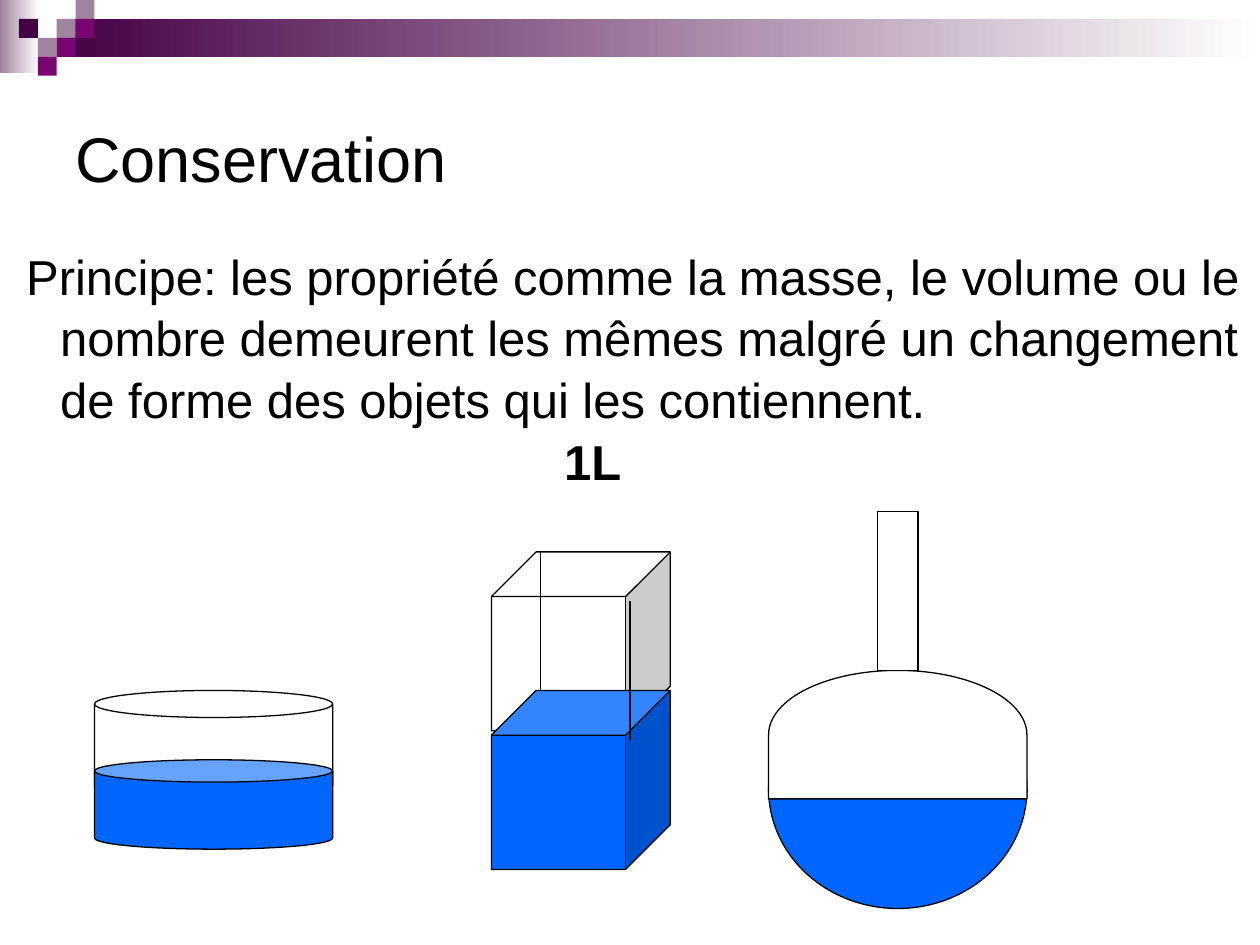
import pptx
import pptx.util
import pptx.dml.color
import pptx.enum.shapes
import pptx.enum.text
import pptx.oxml.ns
import lxml.etree

Inches = pptx.util.Inches
Pt = pptx.util.Pt
SHAPE = pptx.enum.shapes.MSO_SHAPE
COLORS = {
    "black": "000000",
    "white": "FFFFFF",
    "water": "0066FF",
    "dark": "440044",
    "plum": "790571",
    "mauve": "9F839F",
}
FONT = "Arial"


def color(name):
    return pptx.dml.color.RGBColor.from_string(COLORS[name])


def add_shape(page, kind, left, top, width, height, fill, outlined=True):
    shape = page.shapes.add_shape(kind, left, top, width, height)
    shape.shadow.inherit = False
    shape.fill.solid()
    shape.fill.fore_color.rgb = color(fill)
    if outlined:
        shape.line.color.rgb = color("black")
        shape.line.width = Pt(0.75)
    else:
        shape.line.fill.background()
    return shape


def add_fade(page, left, top, width, height, start):
    bar = add_shape(page, SHAPE.RECTANGLE, left, top, width, height, start, False)
    bar.fill.gradient()
    bar.fill.gradient_angle = 0
    for stop, position, name in zip(bar.fill.gradient_stops, (0, 1), (start, "white")):
        stop.position = position
        stop.color.rgb = color(name)


def add_edge(page, left, top, height):
    edge = page.shapes.add_connector(
        pptx.enum.shapes.MSO_CONNECTOR.STRAIGHT, left, top, left, top + height
    )
    edge.line.color.rgb = color("black")
    edge.line.width = Pt(0.75)
    properties = edge._element.spPr
    lxml.etree.SubElement(properties, pptx.oxml.ns.qn("a:effectLst"))


def add_text_box(page, left, top, width, height, anchor):
    box = page.shapes.add_textbox(left, top, width, height)
    box.text_frame.word_wrap = True
    box.text_frame.vertical_anchor = anchor
    return box.text_frame


def add_span(para, text, size, bold=False):
    span = para.add_run()
    span.text = text
    span.font.name = FONT
    span.font.size = Pt(size)
    span.font.bold = bold
    span.font.color.rgb = color("black")


def set_indent(para, margin, indent):
    properties = para._p.get_or_add_pPr()
    properties.set("marL", str(margin))
    properties.set("indent", str(indent))


def draw_banner(page, left, top, width):
    cell = Inches(0.15)
    add_fade(page, left, top, Inches(0.31), Inches(0.58), "mauve")
    add_fade(page, left + 3 * cell, top + cell, width - 3 * cell, 2 * cell, "dark")
    tiles = [
        (3, 1, "mauve"), (4, 0, "mauve"), (4, 1, "plum"), (2, 2, "mauve"),
        (1, 1, "dark"), (3, 2, "plum"), (2, 3, "plum"),
    ]
    for column, row, fill in tiles:
        add_shape(page, SHAPE.RECTANGLE, left + column * cell, top + row * cell,
                  cell, cell, fill, False)


def write_title(page, left, top, width, height):
    frame = add_text_box(page, left, top, width, height, pptx.enum.text.MSO_ANCHOR.MIDDLE)
    add_span(frame.paragraphs[0], "Conservation", 36)


def write_principle(page, left, top, width, height):
    frame = add_text_box(page, left, top, width, height, pptx.enum.text.MSO_ANCHOR.TOP)
    principle = frame.paragraphs[0]
    set_indent(principle, Inches(0.38), Inches(-0.27))
    add_span(principle, "Principe: les propriété comme la masse, le volume ou le nombre "
             "demeurent les mêmes malgré un changement de forme des objets "
             "qui les contiennent.", 28)
    volume = frame.add_paragraph()
    set_indent(volume, Inches(4.38), 0)
    add_span(volume, "1L", 28, bold=True)
    for para in frame.paragraphs:
        para.line_spacing = 1.05


def draw_dish(page, left, top, width, height):
    add_shape(page, SHAPE.CAN, left, top, width, Inches(0.86), "white")
    depth = Inches(0.71)
    add_shape(page, SHAPE.CAN, left, top + height - depth, width, depth, "water")


def draw_cubes(page, left, top, width, height):
    rise = height - width
    add_shape(page, SHAPE.CUBE, left, top, width, width, "white")
    add_shape(page, SHAPE.CUBE, left, top + rise, width, width, "water")
    inset = Inches(0.39)
    add_edge(page, left + inset, top, rise)
    add_edge(page, left + Inches(1.1), top + inset, rise)


def draw_flask(page, left, top, width, height):
    neck_width, neck_height = Inches(0.32), Inches(1.26)
    dome_height = Inches(1.02)
    bowl_top = top + neck_height
    center = left + width // 2
    add_shape(page, SHAPE.OVAL, left, bowl_top, width, height - neck_height, "water")
    dome = add_shape(page, SHAPE.FLOWCHART_DELAY, center - dome_height // 2,
                     bowl_top + (dome_height - width) // 2, dome_height, width, "white")
    dome.rotation = 270
    add_shape(page, SHAPE.RECTANGLE, center - neck_width // 2, top,
              neck_width, neck_height, "white")


def main():
    deck = pptx.Presentation()
    deck.slide_width = Inches(10)
    deck.slide_height = Inches(7.5)
    page = deck.slides.add_slide(deck.slide_layouts[6])
    draw_banner(page, 0, 0, deck.slide_width)
    write_title(page, Inches(0.5), Inches(0.5), Inches(9), Inches(1.5))
    write_principle(page, 0, Inches(1.88), Inches(10), Inches(2.29))
    draw_dish(page, Inches(0.75), Inches(5.48), Inches(1.89), Inches(1.26))
    draw_cubes(page, Inches(3.9), Inches(4.38), Inches(1.42), Inches(2.52))
    draw_flask(page, Inches(6.1), Inches(4.06), Inches(2.05), Inches(3.15))
    deck.save("out.pptx")


if __name__ == "__main__":
    main()
